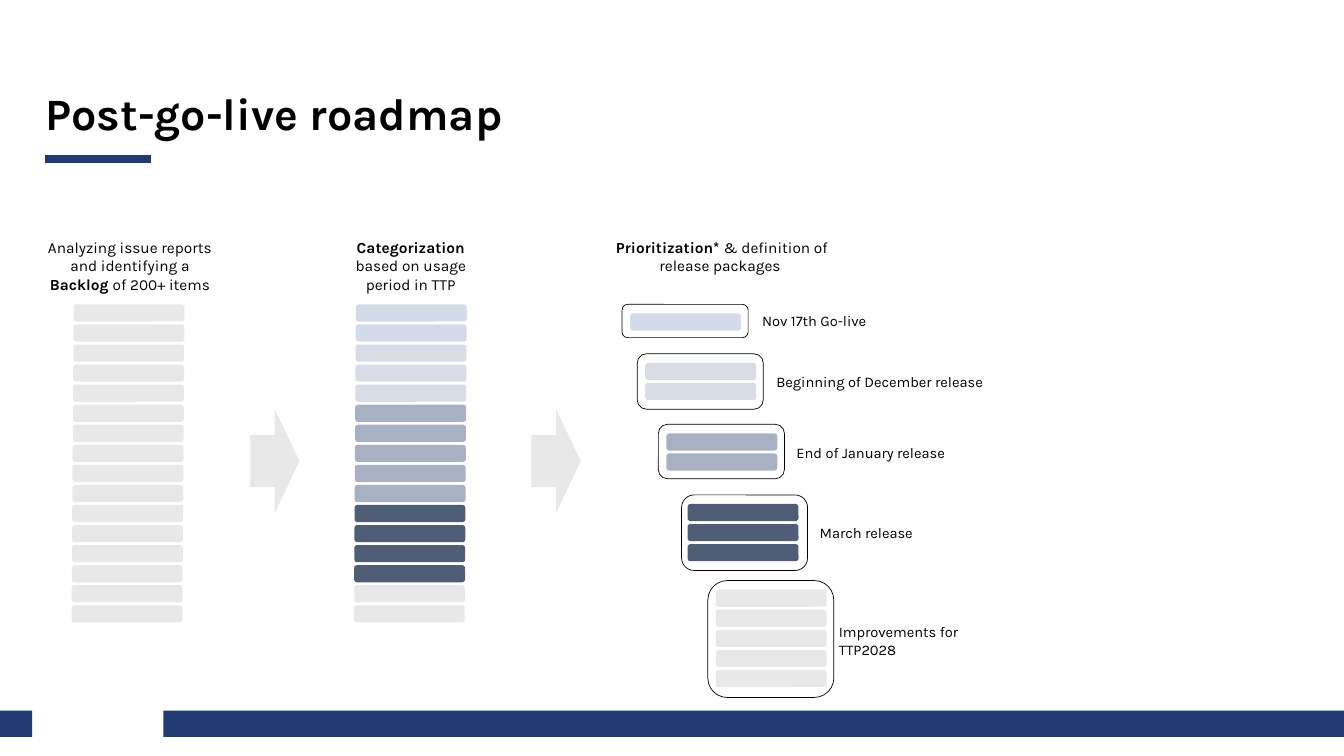
import pptx
import pptx.util
import pptx.dml.color
import pptx.enum.shapes
import pptx.enum.text
import lxml.etree

RGBColor = pptx.dml.color.RGBColor
NAVY = RGBColor(0x1F, 0x3B, 0x71)
BLACK = RGBColor(0, 0, 0)
GREY = RGBColor(0xE8, 0xE8, 0xE8)
SKY = RGBColor(0xD3, 0xDB, 0xE9)
MIST = RGBColor(0xD8, 0xDC, 0xE5)
STEEL = RGBColor(0xA7, 0xB1, 0xC3)
SLATE = RGBColor(0x50, 0x5D, 0x76)
KIND = pptx.enum.shapes.MSO_SHAPE
ALIGN = pptx.enum.text.PP_ALIGN
ANCHOR = pptx.enum.text.MSO_ANCHOR

deck = pptx.Presentation()
deck.slide_width = pptx.util.Inches(13.33)
deck.slide_height = pptx.util.Inches(7.5)
slide = deck.slides.add_slide(deck.slide_layouts[6])
page = slide.shapes
COL = deck.slide_width / 133.3
ROW = deck.slide_height / 75
PITCH, BAR_W, BAR_H = 1.99, 11, 1.7


def block(home, kind, x, y, w, h, fill=None):
    shape = home.add_shape(kind, round(x * COL), round(y * ROW), round(w * COL), round(h * ROW))
    shape.shadow.inherit = False
    if fill is None:
        shape.fill.background()
        shape.line.color.rgb = BLACK
        shape.line.width = pptx.util.Pt(0.5)
    else:
        shape.fill.solid()
        shape.fill.fore_color.rgb = fill
        shape.line.fill.background()


def label(x, y, w, h, size, parts, align=ALIGN.LEFT, anchor=ANCHOR.TOP):
    frame = page.add_textbox(round(x * COL), round(y * ROW), round(w * COL), round(h * ROW)).text_frame
    frame.word_wrap = True
    frame.vertical_anchor = anchor
    frame.margin_left = frame.margin_right = frame.margin_top = frame.margin_bottom = 0
    para = frame.paragraphs[0]
    para.alignment = align
    for text, bold in parts:
        run = para.add_run()
        run.text = text
        run.font.name = "Karla"
        run.font.size = pptx.util.Pt(size)
        run.font.bold = bold
        run.font.color.rgb = BLACK


for x, w in [(16.2, 117.1), (0, 3.2)]:
    block(page, KIND.RECTANGLE, x, 70.5, w, 2.6, NAVY)

rule = page.add_connector(
    pptx.enum.shapes.MSO_CONNECTOR.STRAIGHT,
    round(4.5 * COL), round(15.8 * ROW), round(15 * COL), round(15.8 * ROW))
rule.line.color.rgb = NAVY
rule.line.width = pptx.util.Pt(6)
lxml.etree.SubElement(rule._element.spPr, pptx.oxml.ns.qn("a:effectLst"))

label(4.5, 8.4, 124.4, 5.5, 32, [("Post-go-live roadmap", True)], anchor=ANCHOR.MIDDLE)

heads = [
    (4.4, 17, [("Analyzing issue reports and identifying a ", False), ("Backlog ", True), ("of 200+ items", False)]),
    (33.3, 14.9, [("Categorization ", True), ("based on usage period in TTP", False)]),
    (61, 21.2, [("Prioritization*\u00a0", True), ("& definition of release packages ", False)]),
]
for x, w, parts in heads:
    label(x, 23.6, w, 5.6, 11, parts, ALIGN.CENTER)

stacks = [
    (7.3, [GREY] * 16),
    (35.3, [SKY] * 2 + [MIST] * 3 + [STEEL] * 5 + [SLATE] * 4 + [GREY] * 2),
]
for x, fills in stacks:
    stack = page.add_group_shape().shapes
    for i, fill in enumerate(fills):
        block(stack, KIND.ROUNDED_RECTANGLE, x - i / 75, 30.2 + i * PITCH, BAR_W, BAR_H, fill)

for x in (24.8, 52.7):
    block(page, KIND.RIGHT_ARROW, x, 40.6, 4.9, 10.3, GREY)

packs = [
    (61.7, 30.2, 3.3, 0.8, 1, SKY, 75.6, 30.9, 12.5, "Nov 17th Go-live"),
    (63.2, 35.1, 5.5, 0.8, 2, MIST, 77, 37, 27.5, "Beginning of December release"),
    (65.3, 42.1, 5.4, 0.8, 2, STEEL, 79, 44, 17.7, "End of January release"),
    (67.6, 49.1, 7.5, 0.6, 3, SLATE, 81.3, 52, 17.7, "March release"),
    (70.2, 57.6, 11.6, 0.8, 5, GREY, 83.2, 61.8, 17.7, "Improvements for TTP2028"),
]
for x, y, h, pad, count, fill, left, top, w, name in packs:
    pack = page.add_group_shape().shapes
    for i in range(count):
        block(pack, KIND.ROUNDED_RECTANGLE, x + pad, y + 0.9 + i * PITCH, BAR_W, BAR_H, fill)
    block(pack, KIND.ROUNDED_RECTANGLE, x, y, 12.5, h)
    label(left, top, w, 1.8, 10.5, [(name, False)])

deck.save("out.pptx")
